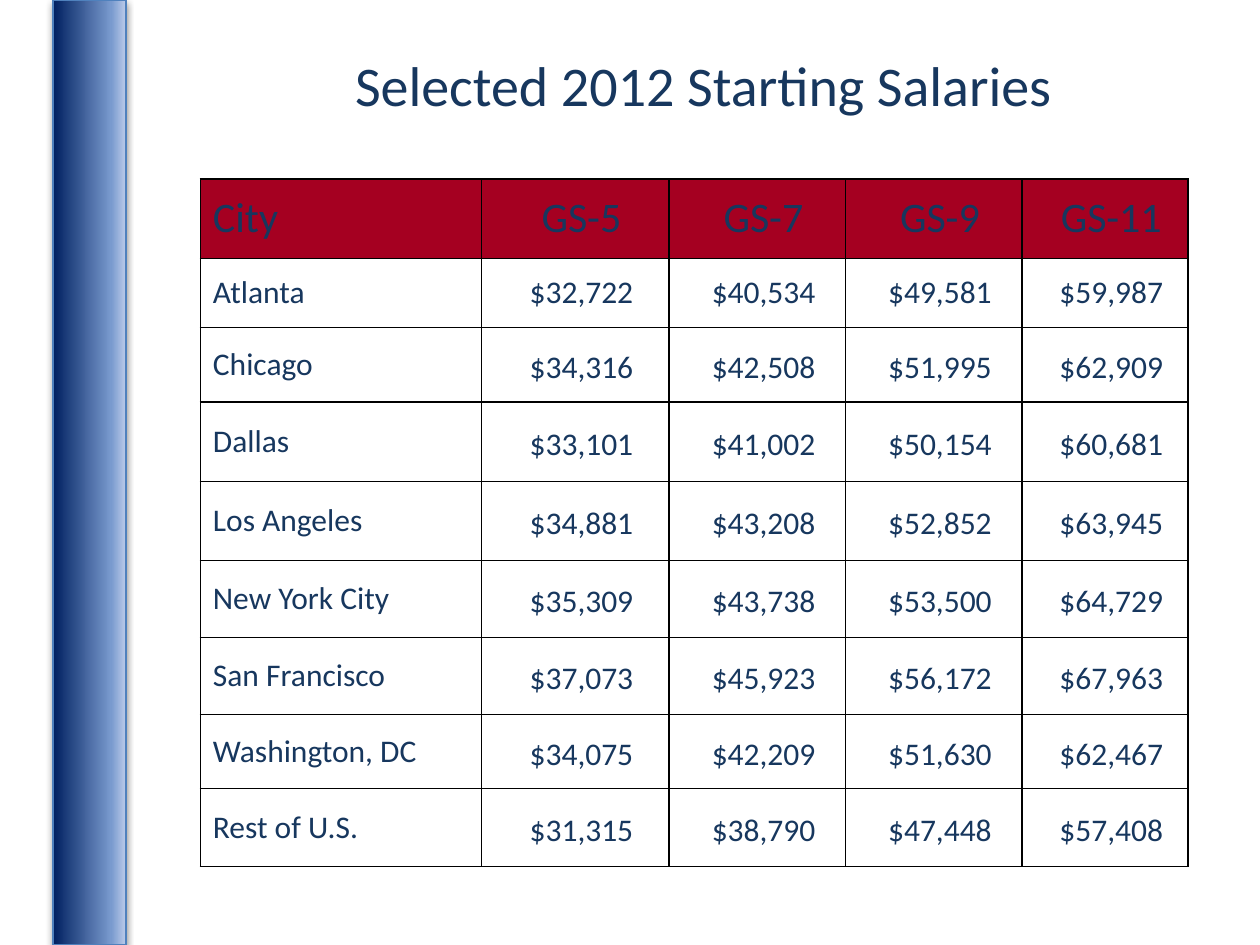
import copy

import lxml.etree
import pptx
import pptx.dml.color
import pptx.enum.shapes
import pptx.enum.text
import pptx.oxml
import pptx.oxml.ns
import pptx.util

Inches = pptx.util.Inches
Pt = pptx.util.Pt
CENTER = pptx.enum.text.PP_ALIGN.CENTER
MIDDLE = pptx.enum.text.MSO_ANCHOR.MIDDLE
NAVY = "17375E"


def rgb(value):
    return pptx.dml.color.RGBColor.from_string(value)


def add_borders(cell):
    """Draw a 1 pt black line on all four sides of a cell."""
    for side in ("lnL", "lnR", "lnT", "lnB"):
        cell._tc.get_or_add_tcPr().append(pptx.oxml.parse_xml(
            f'<a:{side} {pptx.oxml.ns.nsdecls("a")} w="12700">'
            '<a:solidFill><a:srgbClr val="000000"/></a:solidFill>'
            f'</a:{side}>'))


salaries = [
    ("City", "GS-5", "GS-7", "GS-9", "GS-11"),
    ("Atlanta", "$32,722", "$40,534", "$49,581", "$59,987"),
    ("Chicago", "$34,316", "$42,508", "$51,995", "$62,909"),
    ("Dallas", "$33,101", "$41,002", "$50,154", "$60,681"),
    ("Los Angeles", "$34,881", "$43,208", "$52,852", "$63,945"),
    ("New York City", "$35,309", "$43,738", "$53,500", "$64,729"),
    ("San Francisco", "$37,073", "$45,923", "$56,172", "$67,963"),
    ("Washington, DC", "$34,075", "$42,209", "$51,630", "$62,467"),
    ("Rest of U.S.", "$31,315", "$38,790", "$47,448", "$57,408"),
]
column_widths = [2.23, 1.49, 1.4, 1.4, 1.32]
row_heights = [0.63, 0.55, 0.59, 0.63, 0.63, 0.61, 0.61, 0.59, 0.62]

presentation = pptx.Presentation()
presentation.slide_width = Inches(10)
presentation.slide_height = Inches(7.5)
slide = presentation.slides.add_slide(presentation.slide_layouts[5])

# Side bar with a gradient and a soft shadow
side_bar = slide.shapes.add_shape(
    pptx.enum.shapes.MSO_SHAPE.RECTANGLE,
    Inches(0.42), Inches(0), Inches(0.58), Inches(7.5))
side_bar.line.color.rgb = rgb("4F81BD")
side_bar.line.width = Pt(0.75)
side_bar.fill.gradient()
side_bar.fill.gradient_angle = 0
stop_list = side_bar._element.spPr.find(".//" + pptx.oxml.ns.qn("a:gsLst"))
stop_list.append(copy.deepcopy(stop_list[-1]))
bar_stops = [(0, "002060"), (0.8, "799ACE"), (1, "BACAE9")]
for stop, (position, color) in zip(side_bar.fill.gradient_stops, bar_stops):
    stop.position = position
    stop.color.rgb = rgb(color)
side_bar.shadow.inherit = False
effects = side_bar._element.spPr.find(pptx.oxml.ns.qn("a:effectLst"))
effects.append(pptx.oxml.parse_xml(
    f'<a:outerShdw {pptx.oxml.ns.nsdecls("a")} blurRad="{Pt(4)}" dist="{Pt(2)}" '
    'dir="5400000" rotWithShape="0">'
    '<a:srgbClr val="000000"><a:alpha val="45000"/></a:srgbClr></a:outerShdw>'))

# Title
title = slide.shapes.title
title.left, title.top = Inches(1.58), Inches(0.42)
title.width, title.height = Inches(8.01), Inches(0.5)
title.text_frame.text = "Selected 2012 Starting Salaries"
title.text_frame.vertical_anchor = MIDDLE
heading = title.text_frame.paragraphs[0]
heading.alignment = CENTER
heading.font.size = Pt(32)
heading.font.name = "Calibri"
heading.font.color.rgb = rgb(NAVY)

# Salary table
table = slide.shapes.add_table(
    len(salaries), len(column_widths),
    Inches(1.59), Inches(1.42), Inches(7.83), Inches(5.46)).table
table.horz_banding = False
for column, width in zip(table.columns, column_widths):
    column.width = Inches(width)
for row, height in zip(table.rows, row_heights):
    row.height = Inches(height)

for r, record in enumerate(salaries):
    for c, value in enumerate(record):
        cell = table.cell(r, c)
        cell.text = value
        cell.vertical_anchor = MIDDLE
        cell.margin_right = Inches(0)
        add_borders(cell)
        if r == 0:
            cell.fill.solid()
            cell.fill.fore_color.rgb = rgb("A50021")
        else:
            cell.fill.background()
        paragraph = cell.text_frame.paragraphs[0]
        if c > 0:
            paragraph.alignment = CENTER
            if r > 1:
                paragraph.line_spacing = 1.15
        paragraph.font.size = Pt(24 if r == 0 else 18)
        paragraph.font.name = "Calibri"
        paragraph.font.bold = False
        paragraph.font.color.rgb = rgb(NAVY)

presentation.save("out.pptx")
